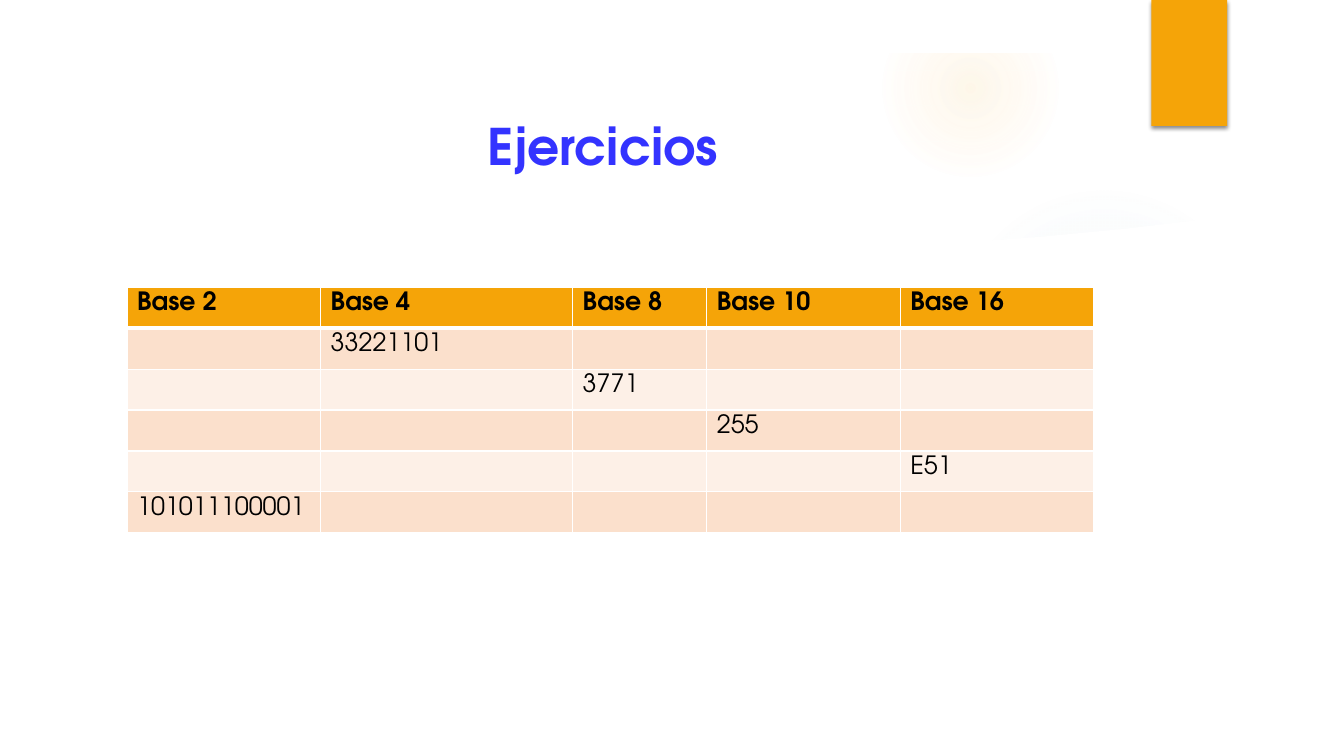
from dataclasses import dataclass
from typing import Any

from lxml import etree
from pptx import Presentation, util as u
from pptx.dml.color import RGBColor
from pptx.enum import shapes, text
from pptx.oxml import ns, parse_xml

FONT = "TeX Gyre Adventor"
WHITE, ORANGE, AMBER, SKY = "FFFFFF", "F5A408", "FAC96A", "8EBBD2"
BLACK, BLUE = "000000", "3333FF"
BANDS = ("FBE0CC", "FDF0E7")


@dataclass
class Glow:
    left: float
    top: float
    size: float
    color: str
    stops: tuple[tuple[int, int], ...]  # (position %, opacity %)


@dataclass
class Mask:
    points: tuple[tuple[float, float], ...]
    opacity: int


GLOWS = (
    Glow(9.41, 1.83, 3.08, SKY, ((0, 7), (36, 6), (69, 0))),
    Glow(8.75, 0, 1.75, AMBER, ((0, 14), (36, 7), (73, 0))),
)
SWOOSH = ((9.34, 2.5), (10.5, 2.46), (11.7, 2.32), (12.89, 2.14), (12.83, 1.66),
          (12.13, 1.88), (11.44, 2.06), (10.75, 2.21), (10.1, 2.32), (9.3, 2.43))
PANEL = ((0.5, 2.04), (0.5, 7), (12.84, 7), (12.84, 2.04), (12, 2.17), (11.16, 2.27),
         (10.32, 2.35), (9.49, 2.41), (8.67, 2.45), (7.6, 2.47), (6.57, 2.48),
         (5.35, 2.45), (4.01, 2.38), (2.83, 2.3), (1.87, 2.21), (0.94, 2.1))
MASKS = (Mask(SWOOSH, 20), Mask(PANEL, 100))

HEADINGS = ("Base 2", "Base 4", "Base 8", "Base 10", "Base 16")
COLUMN_WIDTHS = (1.92, 2.5, 1.33, 1.92, 1.92)
ROW_HEIGHT = 0.406
# One given number per exercise: (column, value)
EXERCISES = ((1, "33221101"), (2, "3771"), (3, "255"), (4, "E51"), (0, "101011100001"))


def rgb(color: str) -> RGBColor:
    return RGBColor.from_string(color)


def apply(target: Any, values: dict[str, Any]) -> None:
    for name, value in values.items():
        setattr(target, name, value)


def style_font(font: Any, size: int, color: str, bold: bool) -> None:
    apply(font, {"name": FONT, "size": u.Pt(size), "bold": bold})
    font.color.rgb = rgb(color)


def xml(body: str) -> Any:
    """Build an element whose opening tag gets the drawing namespace."""
    tag, rest = body.split(" ", 1)
    return parse_xml(f"<{tag} {ns.nsdecls('a')} {rest}")


def paint(shape: Any, color: str, opacity: int = 100) -> None:
    shape.shadow.inherit = False
    shape.line.fill.background()
    shape.fill.solid()
    shape.fill.fore_color.rgb = rgb(color)
    if opacity < 100:
        srgb = shape.element.spPr.find(".//" + ns.qn("a:srgbClr"))
        etree.SubElement(srgb, ns.qn("a:alpha")).set("val", str(opacity * 1000))


def draw_glow(slide: Any, glow: Glow) -> None:
    ellipse = slide.shapes.add_shape(
        shapes.MSO_SHAPE.OVAL, u.Inches(glow.left), u.Inches(glow.top),
        u.Inches(glow.size), u.Inches(glow.size))
    paint(ellipse, glow.color)
    stops = "".join(
        f'<a:gs pos="{pos * 1000}"><a:srgbClr val="{glow.color}">'
        f'<a:alpha val="{opacity * 1000}"/></a:srgbClr></a:gs>'
        for pos, opacity in glow.stops)
    spPr = ellipse.element.spPr
    spPr.replace(spPr.find(ns.qn("a:solidFill")), xml(
        f'a:gradFill rotWithShape="1"><a:gsLst>{stops}</a:gsLst><a:path path="circle">'
        '<a:fillToRect l="50000" t="50000" r="50000" b="50000"/></a:path></a:gradFill>'))


def draw_mask(slide: Any, mask: Mask) -> None:
    corners = [(u.Inches(x), u.Inches(y)) for x, y in mask.points]
    builder = slide.shapes.build_freeform(*corners[0])
    builder.add_line_segments(corners[1:], close=True)
    paint(builder.convert_to_shape(), WHITE, mask.opacity)


def draw_backdrop(slide: Any) -> None:
    for glow in GLOWS:
        draw_glow(slide, glow)
    for mask in MASKS:
        draw_mask(slide, mask)
    border = slide.shapes.add_shape(
        shapes.MSO_SHAPE.FRAME, 0, 0, u.Inches(13.33), u.Inches(7.5))
    border.adjustments[0] = 0.07
    paint(border, WHITE)

    # Orange tab with its soft shadow
    tab = slide.shapes.add_shape(
        shapes.MSO_SHAPE.RECTANGLE, u.Inches(11.42), 0, u.Inches(0.75), u.Inches(1.25))
    paint(tab, ORANGE)
    tab.element.spPr.find(ns.qn("a:effectLst")).append(xml(
        f'a:outerShdw blurRad="{u.Pt(3)}" dist="{u.Pt(2)}" dir="5400000" rotWithShape="0">'
        f'<a:srgbClr val="{BLACK}"><a:alpha val="45000"/></a:srgbClr></a:outerShdw>'))


def place_title(slide: Any) -> None:
    title = slide.shapes.title
    apply(title, {"left": u.Inches(1.26), "top": u.Inches(1.04),
                  "width": u.Inches(9.58), "height": u.Inches(0.8)})
    apply(title.text_frame, {"text": "Ejercicios ", "word_wrap": True,
                             "vertical_anchor": text.MSO_ANCHOR.MIDDLE})
    heading = title.text_frame.paragraphs[0]
    heading.alignment = text.PP_ALIGN.CENTER
    style_font(heading.runs[0].font, 36, BLUE, True)
    title.element.getparent().append(title.element)  # bring to front


def format_cell(cell: Any, value: str, fill: str, header: bool, below_header: bool) -> None:
    cell.fill.solid()
    cell.fill.fore_color.rgb = rgb(fill)
    weights = {"L": 1, "R": 1, "T": 3 if below_header else 1, "B": 3 if header else 1}
    for index, (side, weight) in enumerate(weights.items()):
        cell._tc.get_or_add_tcPr().insert(index, xml(
            f'a:ln{side} w="{u.Pt(weight)}"><a:solidFill><a:srgbClr val="{WHITE}"/>'
            f'</a:solidFill></a:ln{side}>'))
    if value:
        cell.text = value
        style_font(cell.text_frame.paragraphs[0].runs[0].font, 18, BLACK, header)


def draw_bases(slide: Any) -> None:
    rows = [HEADINGS] + [
        tuple(value if column == given else "" for column in range(len(HEADINGS)))
        for given, value in EXERCISES]
    bases = slide.shapes.add_table(
        len(rows), len(HEADINGS), u.Inches(1.26), u.Inches(2.85),
        u.Inches(sum(COLUMN_WIDTHS)), u.Inches(ROW_HEIGHT * len(rows))).table
    bases.horz_banding = False
    for column, width in zip(bases.columns, COLUMN_WIDTHS):
        column.width = u.Inches(width)
    for r, values in enumerate(rows):
        fill = BANDS[(r - 1) % 2] if r else ORANGE
        for c, value in enumerate(values):
            format_cell(bases.cell(r, c), value, fill, r == 0, r == 1)


def main() -> None:
    deck = Presentation()
    apply(deck, {"slide_width": u.Inches(13.33), "slide_height": u.Inches(7.5)})
    slide = deck.slides.add_slide(deck.slide_layouts[5])
    draw_backdrop(slide)
    place_title(slide)
    draw_bases(slide)
    deck.save("out.pptx")


if __name__ == "__main__":
    main()
